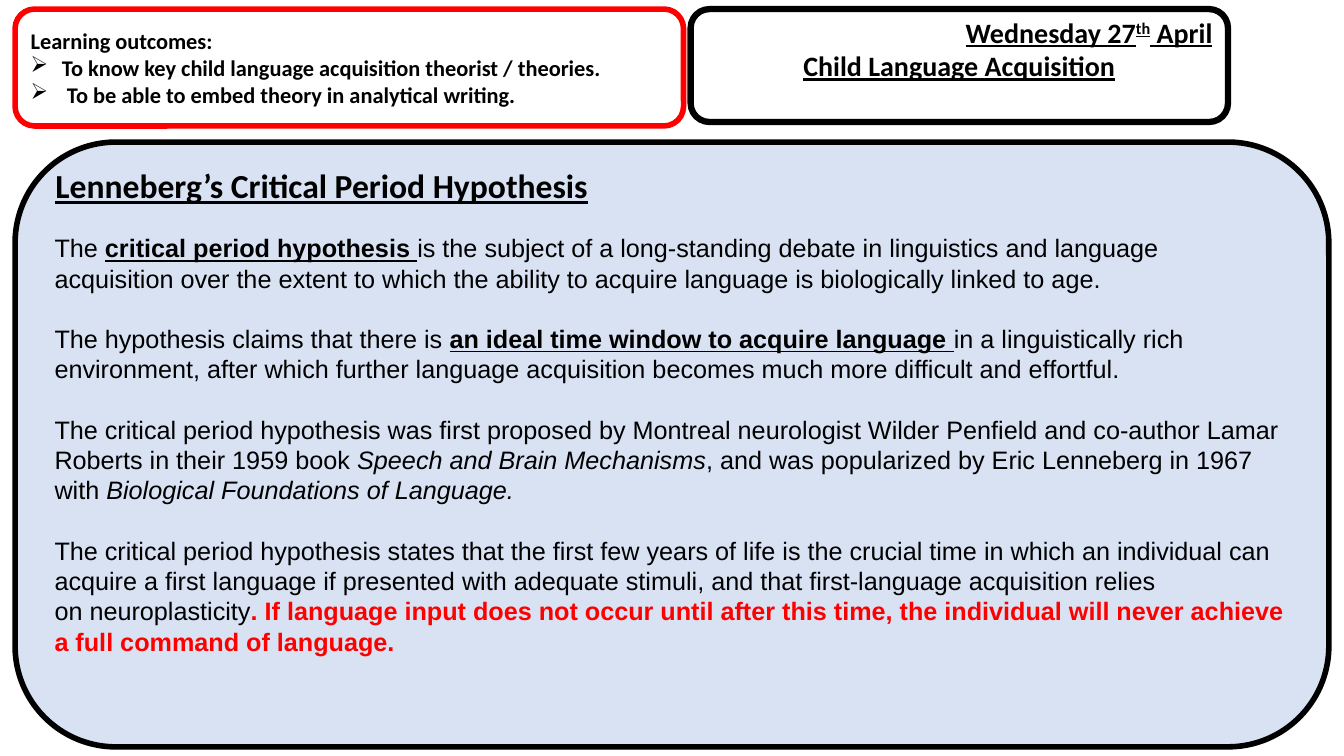
from lxml import etree
from pptx import Presentation
from pptx import util as u
from pptx.dml.color import RGBColor
from pptx.enum import shapes, text
from pptx.oxml import ns

BLACK, RED, WHITE, PALE_BLUE = "000000", "FF0000", "FFFFFF", "D8E2F3"
MARGIN = 0.15
TIE = chr(160)


def write(paragraph, words, size=18, font="Arial", color=BLACK, bold=False,
          italic=False, underline=False, baseline=0):
    run = paragraph.add_run()
    run.text = words
    style = run.font
    style.size, style.name = u.Pt(size), font
    style.bold, style.italic, style.underline = bold, italic, underline
    style.color.rgb = RGBColor.from_string(color)
    if baseline:
        run._r.get_or_add_rPr().set("baseline", str(baseline * 1000))


def add_panel(left, top, width, height, fill, line, weight):
    panel = slide.shapes.add_shape(
        shapes.MSO_SHAPE.ROUNDED_RECTANGLE,
        u.Inches(left), u.Inches(top), u.Inches(width), u.Inches(height))
    panel.shadow.inherit = False
    panel.fill.solid()
    panel.fill.fore_color.rgb = RGBColor.from_string(fill)
    panel.line.color.rgb = RGBColor.from_string(line)
    panel.line.width = u.Pt(weight)
    frame = panel.text_frame
    frame.word_wrap = True
    frame.vertical_anchor = text.MSO_ANCHOR.MIDDLE
    frame.paragraphs[0].alignment = text.PP_ALIGN.LEFT
    return frame


prs = Presentation()
prs.slide_width, prs.slide_height = u.Inches(13.33), u.Inches(7.5)
slide = prs.slides.add_slide(prs.slide_layouts[5])

key_term = dict(bold=True, underline=True)
book = dict(italic=True)
explanation = [
    [("The ", {}), ("critical period hypothesis ", key_term),
     ("is the subject of a long-standing debate in linguistics and language "
      f"acquisition{TIE}over the extent to which the ability to acquire language is "
      "biologically linked to age.", {})],
    [("The hypothesis claims that there is ", {}),
     ("an ideal time window to acquire language ", key_term),
     ("in a linguistically rich environment, after which further language acquisition "
      "becomes much more difficult and effortful.", {})],
    [("The critical period hypothesis was first proposed by Montreal neurologist "
      "Wilder Penfield and co-author Lamar Roberts in their 1959 book ", {}),
     ("Speech and Brain Mechanisms", book),
     (", and was popularized by Eric Lenneberg in 1967 with ", {}),
     ("Biological Foundations of Language.", book)],
    [("The critical period hypothesis states that the first few years of life is the crucial "
      "time in which an individual can acquire a first language if presented with adequate "
      "stimuli, and that first-language acquisition relies "
      f"on{TIE}neuroplasticity", {}),
     (". If language input does not occur until after this time, the individual will never "
      "achieve a full command of language.", dict(bold=True, color=RED))],
]
theory = add_panel(MARGIN, 1.41, 13.33 - 2 * MARGIN, 6, PALE_BLUE, BLACK, 4)
for number, passage in enumerate(explanation):
    paragraph = theory.add_paragraph() if number else theory.paragraphs[0]
    paragraph.alignment = text.PP_ALIGN.LEFT
    paragraph.line_spacing = u.Pt(21.6)
    paragraph.space_before = u.Pt(21.6 if number else 0)
    for words, style in passage:
        write(paragraph, words, **style)

outcomes = add_panel(MARGIN, 0.09, 6.63, 1.16, WHITE, RED, 4)
label = dict(size=16, font="Calibri", bold=True)
write(outcomes.paragraphs[0], "Learning outcomes:", **label)
for outcome in ("To know key child language acquisition theorist / theories.",
                " To be able to embed theory in analytical writing."):
    paragraph = outcomes.add_paragraph()
    paragraph.alignment = text.PP_ALIGN.LEFT
    write(paragraph, outcome, **label)
    properties = paragraph._p.get_or_add_pPr()
    indent = u.Inches(0.31)
    properties.set("marL", str(indent))
    properties.set("indent", str(-indent))
    bullet_font = etree.SubElement(properties, ns.qn("a:buFont"))
    bullet_font.set("typeface", "Wingdings")
    bullet_font.set("charset", "2")
    etree.SubElement(properties, ns.qn("a:buChar")).set("char", "Ø")

lesson = add_panel(6.85, 0.09, 5.33, 1.12, WHITE, BLACK, 4.5)
lesson.margin_bottom = u.Inches(0.38)
heading = dict(size=20, font="Calibri", bold=True, underline=True)
date = lesson.paragraphs[0]
date.alignment = text.PP_ALIGN.RIGHT
write(date, "Wednesday 27", **heading)
write(date, "th", baseline=30, **heading)
write(date, " April", **heading)
topic = lesson.add_paragraph()
topic.alignment = text.PP_ALIGN.CENTER
write(topic, "Child Language Acquisition", **heading)

title = slide.shapes.title
title.left, title.top = u.Inches(0.45), u.Inches(1.59)
title.width, title.height = u.Inches(5.54), u.Inches(0.5)
title.text_frame.vertical_anchor = text.MSO_ANCHOR.TOP
title.text_frame.word_wrap = True
title.text_frame.paragraphs[0].alignment = text.PP_ALIGN.LEFT
write(title.text_frame.paragraphs[0], "Lenneberg’s Critical Period Hypothesis",
      size=24, font="Calibri", bold=True, underline=True)
tree = title._element.getparent()
tree.append(title._element)

prs.save("out.pptx")
